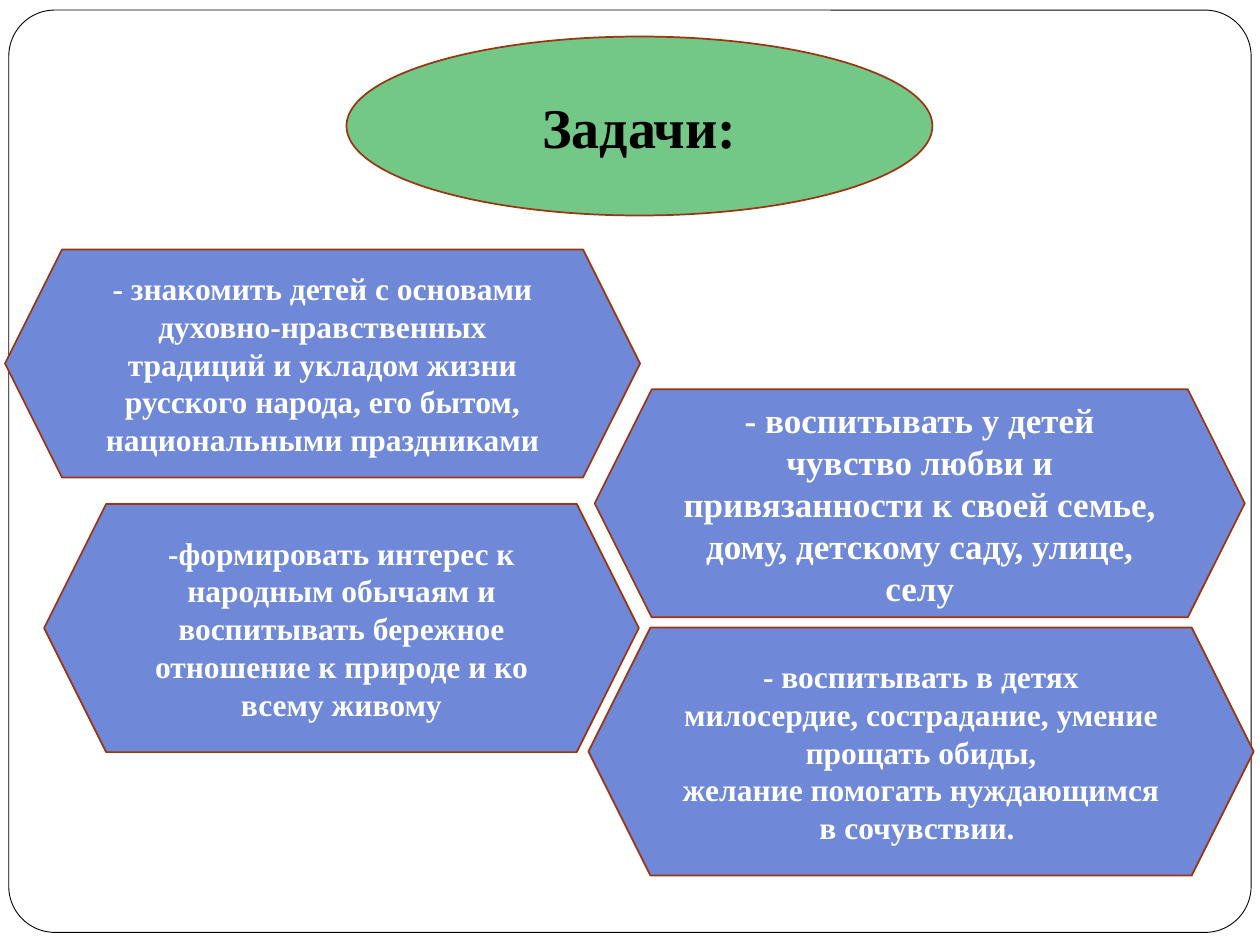
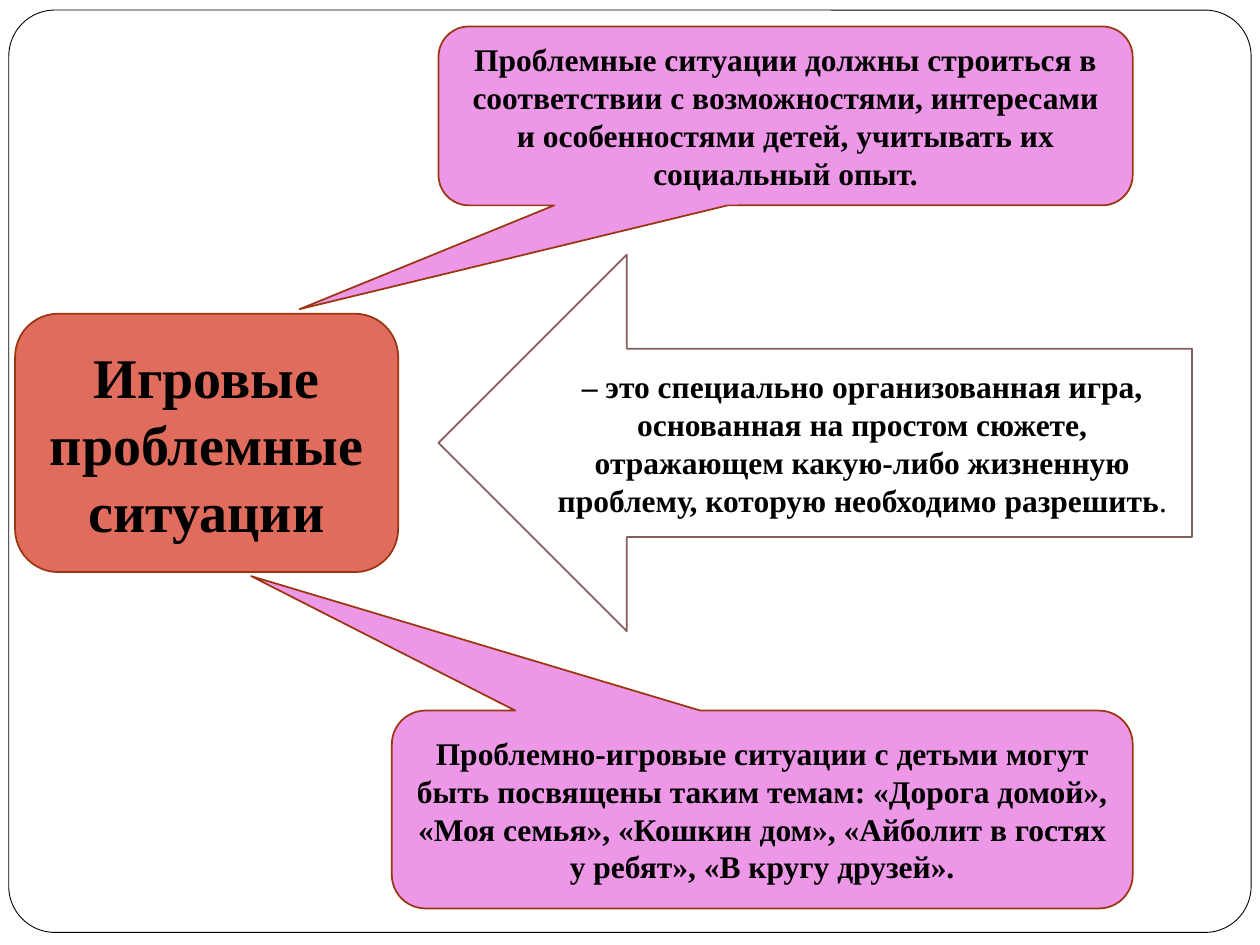
"""Build two slides: the tasks, and the problem situations in play."""
from pptx import Presentation
from pptx.dml.color import RGBColor as RGB
from pptx.enum.shapes import MSO_SHAPE as Kind
from pptx.enum.text import MSO_ANCHOR as Anchor, PP_ALIGN as Align
from pptx.util import Inches, Pt

FONT = "Times New Roman"
HUES = {
    "white": "FFFFFF", "black": "000000", "rust": "9C3511", "mauve": "855D5D",
    "green": "73C787", "blue": "6F88D7", "red": "DF6C5D", "pink": "ED97E7",
}


def hue(name):
    return RGB.from_string(HUES[name])


def write(slide, kind, box, text="", fill="white", line="rust", width=1,
          adj=(), size=18, color="black", tail=""):
    shape = slide.shapes.add_shape(kind, *(Inches(n) for n in box))
    shape.shadow.inherit = False
    for i, val in enumerate(adj):
        shape.adjustments[i] = val
    shape.fill.solid()
    shape.fill.fore_color.rgb = hue(fill)
    shape.line.color.rgb = hue(line)
    shape.line.width = Pt(width)
    frame = shape.text_frame
    frame.word_wrap = True
    frame.vertical_anchor = Anchor.MIDDLE
    para = frame.paragraphs[0]
    para.alignment = Align.CENTER
    para.text = text
    if tail:
        para.add_run().text = tail
    for run in para.runs:
        run.font.name = FONT
        run.font.size = Pt(size)
        run.font.bold = run.text != tail
        run.font.color.rgb = hue(color)


deck = Presentation()
deck.slide_width, deck.slide_height = Inches(10), Inches(7.5)
tasks, play = (deck.slides.add_slide(deck.slide_layouts[6]) for _ in range(2))

for slide in (tasks, play):
    write(slide, Kind.ROUNDED_RECTANGLE, (0.07, 0.08, 9.86, 7.32),
          line="black", width=0.5, adj=[0.05])

write(tasks, Kind.OVAL, (2.75, 0.29, 4.65, 1.42), "Задачи:", fill="green", size=32)

goals = [
    ((0.04, 1.98, 5.04, 1.81), 18,
     "- знакомить детей с основами духовно-нравственных традиций и укладом "
     "жизни русского народа, его бытом, национальными праздниками"),
    ((4.67, 4.98, 5.28, 1.97), 18,
     "- воспитывать в детях милосердие, сострадание, умение прощать обиды,\n"
     "желание помогать нуждающимся в сочувствии. "),
    ((0.35, 4, 4.72, 1.97), 18,
     "-формировать интерес к народным обычаям и воспитывать бережное "
     "отношение к природе и ко всему живому"),
    ((4.72, 3.09, 5.16, 1.81), 20,
     "- воспитывать у детей чувство любви и привязанности к своей семье, "
     "дому, детскому саду, улице, селу"),
]
for box, size, text in goals:
    write(tasks, Kind.HEXAGON, box, text, fill="blue", color="white", size=size)

write(play, Kind.ROUNDED_RECTANGLE, (0.12, 2.49, 3.04, 2.05),
      "Игровые проблемные ситуации", fill="red", size=32)

notes = [
    ((3.48, 0.21, 5.51, 1.42), (-0.7, 1.08, 0.17),
     "Проблемные ситуации должны строиться в соответствии с возможностями, "
     "интересами и особенностями детей, учитывать их социальный опыт."),
    ((3.11, 5.64, 5.88, 1.57), (-0.69, -1.18, 0.17),
     "Проблемно-игровые ситуации с детьми могут быть посвящены таким темам: "
     "«Дорога домой», «Моя семья», «Кошкин дом», «Айболит в гостях у ребят», "
     "«В кругу друзей»."),
]
for box, adj, text in notes:
    write(play, Kind.ROUNDED_RECTANGULAR_CALLOUT, box, text, fill="pink", adj=adj)

write(play, Kind.LEFT_ARROW, (3.48, 2.02, 5.98, 2.99),
      "– это специально организованная игра, основанная на простом сюжете, "
      "отражающем какую-либо жизненную проблему, которую необходимо разрешить",
      line="mauve", tail=".")

deck.save("out.pptx")
